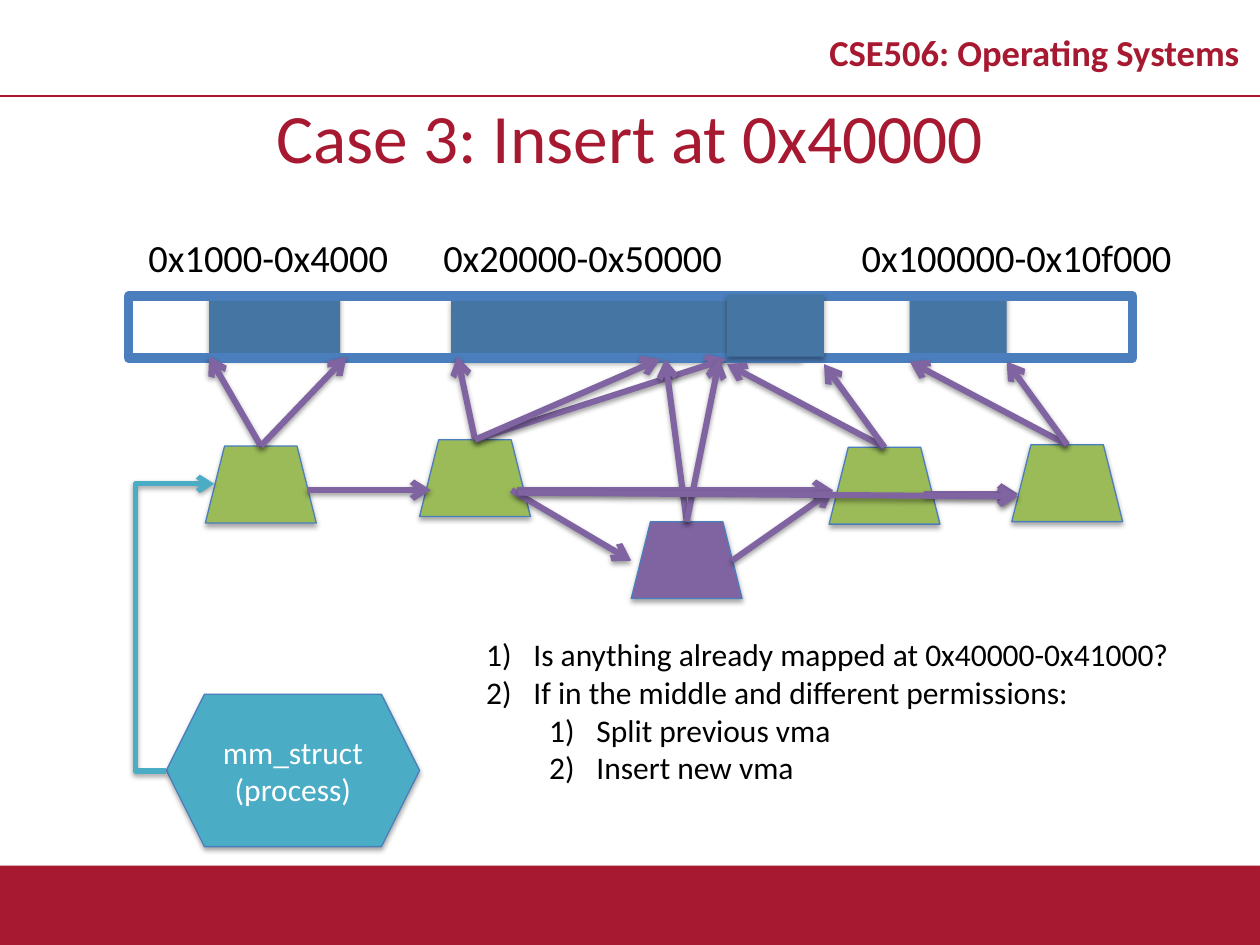
import pptx
import pptx.dml.color
import pptx.enum.shapes
import pptx.enum.text
import pptx.oxml
import pptx.oxml.ns
import pptx.util
from dataclasses import dataclass

# The slide is a grid of 100 columns by 75 rows
COLS, ROWS = 100, 75
CELL = pptx.util.Inches(0.1)
HUES = {"red": "A71930", "steel": "4576A3", "edge": "4B7EBC", "green": "9BBB59",
        "plum": "8064A2", "teal": "4BACC6", "black": "000000", "white": "FFFFFF"}
KIND = pptx.enum.shapes.MSO_SHAPE
WIRE = pptx.enum.shapes.MSO_CONNECTOR
ALIGN = pptx.enum.text.PP_ALIGN
MIDDLE = pptx.enum.text.MSO_ANCHOR.MIDDLE
NODE_W, NODE_H = 8.8, 6.1
BAR_H = 4.9


@dataclass
class Label:
    text: str
    col: float
    row: float
    wide: float
    high: float
    size: float = 22
    hue: str = "black"
    bold: bool = False
    gap: float = 1.0
    mid: bool = False


@dataclass
class Block:
    col: float
    row: float
    wide: float


@dataclass
class Node:
    col: float
    row: float
    hue: str
    ends: tuple  # points in the bar that the node marks


@dataclass
class Step:
    text: str
    level: int = 0


def grid(cells: float) -> int:
    return pptx.util.Emu(round(cells * CELL))


def tint(hue: str) -> pptx.dml.color.RGBColor:
    return pptx.dml.color.RGBColor.from_string(HUES[hue])


def style(font, size: float, hue: str, bold: bool = False) -> None:
    form = {"name": "Calibri", "size": pptx.util.Pt(size), "bold": bold}
    for key, value in form.items():
        setattr(font, key, value)
    font.color.rgb = tint(hue)


def shade(shape, dist: float, alpha: int) -> None:
    """Give a shape or a connector a soft shadow below it."""
    props = shape._element.spPr
    tag = pptx.oxml.ns.qn("a:effectLst")
    if props.find(tag) is None:
        props.append(props.makeelement(tag, {}))
    cast = pptx.oxml.parse_xml(
        f'<a:outerShdw {pptx.oxml.ns.nsdecls("a")} blurRad="{pptx.util.Pt(3.1)}" '
        f'dist="{pptx.util.Pt(dist)}" dir="5400000" rotWithShape="0">'
        f'<a:srgbClr val="{HUES["black"]}"><a:alpha val="{alpha}000"/></a:srgbClr>'
        '</a:outerShdw>')
    props.find(tag).append(cast)


def draw_shape(slide, kind, col: float, row: float, wide: float, high: float,
               fill: str = "", edge: float = 0):
    shape = slide.shapes.add_shape(kind, *map(grid, (col, row, wide, high)))
    shape.shadow.inherit = False
    if fill:
        shape.fill.solid()
        shape.fill.fore_color.rgb = tint(fill)
        shade(shape, 1.8, 35)
    else:
        shape.fill.background()
    if edge:
        shape.line.color.rgb = tint("edge")
        shape.line.width = pptx.util.Pt(edge)
    else:
        shape.line.fill.background()
    return shape


def draw_line(slide, start: tuple, end: tuple, hue: str = "plum", width: float = 3.5,
              kind=WIRE.STRAIGHT, arrow: bool = True):
    line = slide.shapes.add_connector(kind, *map(grid, start + end))
    line.line.color.rgb = tint(hue)
    line.line.width = pptx.util.Pt(width)
    props = line._element.spPr
    if arrow:
        tail = props.makeelement(pptx.oxml.ns.qn("a:tailEnd"), {"type": "arrow"})
        props.find(pptx.oxml.ns.qn("a:ln")).append(tail)
        shade(line, 1.6, 38)
    else:
        props.append(props.makeelement(pptx.oxml.ns.qn("a:effectLst"), {}))
    return line


def draw_label(slide, item: Label) -> None:
    box = slide.shapes.add_textbox(*map(grid, (item.col, item.row, item.wide, item.high)))
    frame = box.text_frame
    frame.word_wrap = item.mid
    para = frame.paragraphs[0]
    para.text = item.text
    para.line_spacing = item.gap
    if item.mid:
        frame.vertical_anchor = MIDDLE
        para.alignment = ALIGN.CENTER
    style(para.runs[0].font, item.size, item.hue, item.bold)


def draw_block(slide, item: Block) -> None:
    draw_shape(slide, KIND.RECTANGLE, item.col, item.row, item.wide, BAR_H, "steel")


def draw_node(slide, item: Node) -> None:
    shape = draw_shape(slide, KIND.TRAPEZOID, item.col, item.row, NODE_W, NODE_H,
                       item.hue, 0.75)
    for end in item.ends:
        line = draw_line(slide, (item.col + NODE_W / 2, item.row), end)
        line.begin_connect(shape, 0)


def draw_steps(slide, steps: list) -> None:
    frame = slide.shapes.add_textbox(*map(grid, (37.6, 49.9, 60.1, 13.1))).text_frame
    frame.word_wrap = True
    for spot, step in enumerate(steps):
        para = frame.add_paragraph() if spot else frame.paragraphs[0]
        para.text = step.text
        para.level = step.level
        props = para._p.get_or_add_pPr()
        props.set("marL", str(grid(3.75 + 5 * step.level)))
        props.set("indent", str(grid(-3.75)))
        props.append(props.makeelement(pptx.oxml.ns.qn("a:buAutoNum"),
                                       {"type": "arabicParenR"}))
        style(para.runs[0].font, 18, "black")


LABELS = [
    Label("CSE506: Operating Systems", 64.2, 1.3, 35.8, 6.3, 20.9, "red", True, 0.8, True),
    Label("Case 3: Insert at 0x40000", 0, 7.6, COLS, 6.3, 39.6, "red", mid=True),
    Label("0x1000-0x4000", 10.8, 18.1, 21.9, 4.7),
    Label("0x20000-0x50000", 34.2, 18.1, 25, 4.7),
    Label("0x100000-0x10f000", 67.4, 18.1, 27.5, 4.7),
]
BLOCKS = [Block(72.2, 23.3, 7.7), Block(35.8, 23.7, 27.8), Block(16.6, 23.5, 10.4)]
SPLIT = Block(57.7, 23.4, 7.7)
NODES = [
    Node(16.3, 35.4, "green", ((16.6, 28.3), (27.5, 28.3))),
    Node(33.3, 34.9, "green", ((36.3, 28.3), (57.6, 28.5), (52.4, 28.5))),
    Node(80.3, 35.3, "green", ((72.2, 28.7), (79.9, 28.7))),
    Node(50.1, 41.4, "plum", ((52.8, 28.5), (57.1, 28.5))),
    Node(65.8, 35.5, "green", ((57.7, 28.9), (65.4, 28.9))),
]
LINKS = [
    ((24.4, 38.9), (34.2, 38.9)), ((41, 38.9), (66.1, 38.9)),
    ((40.6, 38.9), (50.1, 44.5)), ((58.1, 44.5), (66.1, 38.9)),
    ((73.3, 39.2), (80.8, 39.2)), ((41.1, 39.1), (80.8, 39.4)),
]
STEPS = [
    Step("Is anything already mapped at 0x40000-0x41000?"),
    Step("If in the middle and different permissions:"),
    Step("Split previous vma", 1),
    Step("Insert new vma", 1),
]


def main() -> None:
    deck = pptx.Presentation()
    deck.slide_width, deck.slide_height = grid(COLS), grid(ROWS)
    slide = deck.slides.add_slide(deck.slide_layouts[6])

    # Footer band, header rule and labels
    draw_shape(slide, KIND.RECTANGLE, 0, 68.7, COLS, 6.3, "red")
    draw_line(slide, (0, 7.6), (COLS, 7.6), "red", 1, arrow=False)
    for item in LABELS:
        draw_label(slide, item)

    # Address space
    for item in BLOCKS:
        draw_block(slide, item)
    draw_shape(slide, KIND.RECTANGLE, 10.2, 23.5, 79.7, BAR_H, edge=5.5)
    draw_block(slide, SPLIT)

    # List of areas
    for item in NODES:
        draw_node(slide, item)
    for start, end in LINKS:
        draw_line(slide, start, end)

    # Process and its elbow arrow to the first area
    root = draw_shape(slide, KIND.HEXAGON, 13.2, 55.1, 20.1, 12.1, "teal", 0.75)
    root.text_frame.vertical_anchor = MIDDLE
    root.text_frame.text = "mm_struct\n(process)"
    for para in root.text_frame.paragraphs:
        para.alignment = ALIGN.CENTER
        style(para.runs[0].font, 18, "white")
    elbow = draw_line(slide, (13.2, 61.2), (17, 38.4), "teal", 3, WIRE.ELBOW)
    bends = elbow._element.spPr.prstGeom.get_or_add_avLst()
    bends.append(bends.makeelement(pptx.oxml.ns.qn("a:gd"),
                                   {"name": "adj1", "fmla": "val -65000"}))

    draw_steps(slide, STEPS)
    deck.save("out.pptx")


if __name__ == "__main__":
    main()
